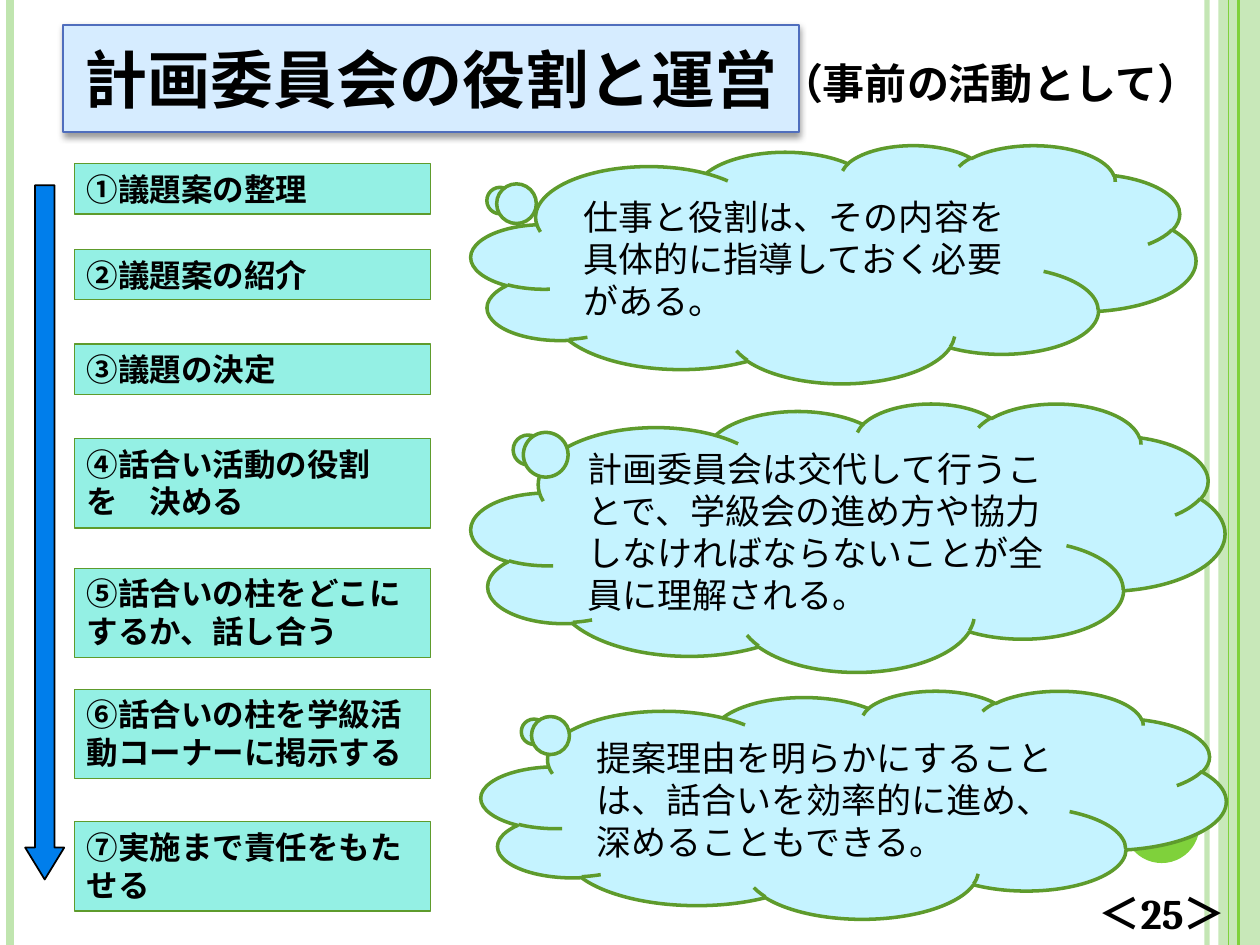
from lxml.etree import SubElement
from pptx import Presentation
from pptx.dml.color import RGBColor
from pptx.enum.shapes import MSO_CONNECTOR, MSO_SHAPE as Preset
from pptx.enum.text import MSO_ANCHOR as Anchor, MSO_AUTO_SIZE as AutoSize, PP_ALIGN as Align
from pptx.oxml.ns import qn
from pptx.util import Inches, Pt

BLACK = RGBColor(0x00, 0x00, 0x00)
PALE_GREEN = RGBColor(0xC0, 0xE5, 0xAF)
BRIGHT_GREEN = RGBColor(0x7F, 0xD1, 0x3B)
DARK_GREEN = RGBColor(0x5E, 0x9B, 0x2C)
TITLE_FILL = RGBColor(0xD6, 0xEC, 0xFF)
TITLE_LINE = RGBColor(0x50, 0x6E, 0xBD)
STEP_FILL = RGBColor(0x94, 0xF0, 0xE4)
CLOUD_FILL = RGBColor(0xC5, 0xF3, 0xFF)
ARROW_FILL = RGBColor(0x00, 0x7E, 0xEB)
GOTHIC = "Noto Sans CJK JP"
SERIF = "Cambria"

deck = Presentation()
deck.slide_width, deck.slide_height = Inches(10), Inches(7.5)
COL, ROW = deck.slide_width / 100, deck.slide_height / 75
slide = deck.slides.add_slide(deck.slide_layouts[5])
shapes = slide.shapes


def draw(preset, col, row, cols, rows, fill, line=None, weight=1):
    """Add a preset shape on the 100 x 75 grid."""
    shape = shapes.add_shape(preset, int(col * COL), int(row * ROW), int(cols * COL), int(rows * ROW))
    shape.shadow.inherit = False
    shape.fill.solid()
    shape.fill.fore_color.rgb = fill
    if line is None:
        shape.line.fill.background()
    else:
        shape.line.color.rgb = line
        shape.line.width = Pt(weight)
    return shape


def write(holder, text, size=18, font=GOTHIC, bold=True, align=Align.LEFT, anchor=Anchor.TOP):
    """Put one formatted paragraph into a shape."""
    frame = holder.text_frame
    frame.word_wrap = True
    frame.auto_size = AutoSize.NONE
    frame.vertical_anchor = anchor
    paragraph = frame.paragraphs[0]
    paragraph.alignment = align
    run = paragraph.add_run()
    run.text = text
    run.font.size, run.font.bold, run.font.name = Pt(size), bold, font
    run.font.color.rgb = BLACK
    SubElement(run.font._element, qn("a:ea"), typeface=GOTHIC)


# Striped borders: column, colour, weight, opacity in percent
right_band = draw(Preset.RECTANGLE, 96.7, 0, 3.3, 75, PALE_GREEN)
translucent = [(right_band, 87)]
for col, color, weight, opacity in [
    (95.8, PALE_GREEN, 3, 93),
    (0.8, PALE_GREEN, 4.5, 100),
    (98.3, BRIGHT_GREEN, 1.5, 100),
    (97.5, BRIGHT_GREEN, 0.75, 100),
]:
    stripe = shapes.add_connector(MSO_CONNECTOR.STRAIGHT, int(col * COL), 0, int(col * COL), deck.slide_height)
    stripe.line.color.rgb = color
    stripe.line.width = Pt(weight)
    SubElement(stripe._element.spPr, qn("a:effectLst"))
    if opacity < 100:
        translucent.append((stripe, opacity))
for part, opacity in translucent:
    color_node = next(part._element.spPr.iter(qn("a:srgbClr")))
    SubElement(color_node, qn("a:alpha"), val=str(opacity * 1000))
draw(Preset.OVAL, 89.2, 62.5, 6, 6, BRIGHT_GREEN)

# Title with a soft shadow below it
title = shapes.title
title.left, title.top = int(5 * COL), int(2 * ROW)
title.width, title.height = int(58.4 * COL), int(8.5 * ROW)
title.fill.solid()
title.fill.fore_color.rgb = TITLE_FILL
title.line.color.rgb = TITLE_LINE
title.line.width = Pt(1)
write(title, "計画委員会の役割と運営", size=36, align=Align.CENTER, anchor=Anchor.MIDDLE)
effects = SubElement(title._element.spPr, qn("a:effectLst"))
shadow = SubElement(effects, qn("a:outerShdw"), blurRad=str(Pt(4)), dist=str(Pt(2)),
                    dir="5400000", rotWithShape="0")
shadow_color = SubElement(shadow, qn("a:srgbClr"), val=str(BLACK))
SubElement(shadow_color, qn("a:alpha"), val="40000")

# Seven steps: top row, height in rows, text
ONE_LINE, TWO_LINES = 4, 7.1
for row, rows, step in [
    (13, ONE_LINE, "①議題案の整理"),
    (19.8, ONE_LINE, "②議題案の紹介"),
    (27.3, ONE_LINE, "③議題の決定"),
    (34.8, TWO_LINES, "④話合い活動の役割を　決める"),
    (45.1, TWO_LINES, "⑤話合いの柱をどこにするか、話し合う"),
    (54.7, TWO_LINES, "⑥話合いの柱を学級活動コーナーに掲示する"),
    (65.2, TWO_LINES, "⑦実施まで責任をもたせる"),
]:
    write(draw(Preset.RECTANGLE, 5.9, row, 28.3, rows, STEP_FILL, DARK_GREEN, 0.75), step, font=SERIF)

# Advice clouds: place on the grid, pointer offset, text
for place, pointer, advice in [
    ((37.4, 11.5, 57.5, 18.9), (-0.465, -0.269),
     "仕事と役割は、その内容を具体的に指導しておく必要がある。"),
    ((37.4, 32, 59.8, 21.3), (-0.429, -0.329),
     "計画委員会は交代して行うことで、学級会の進め方や協力しなければならないことが全員に理解される。"),
    ((38.2, 54.8, 59.1, 18.1), (-0.435, -0.323),
     "提案理由を明らかにすることは、話合いを効率的に進め、深めることもできる。"),
]:
    cloud = draw(Preset.CLOUD_CALLOUT, *place, CLOUD_FILL, DARK_GREEN, 2)
    cloud.adjustments[0], cloud.adjustments[1] = pointer
    write(cloud, advice, size=20, bold=False, anchor=Anchor.MIDDLE)

# Page number and subtitle
for place, text, font, anchor in [
    ((86.2, 69.8, 14.2, 5.2), "＜25＞", SERIF, Anchor.MIDDLE),
    ((61, 4.1, 38.2, 5), "（事前の活動として）", GOTHIC, Anchor.TOP),
]:
    col, row, cols, rows = place
    label = shapes.add_textbox(int(col * COL), int(row * ROW), int(cols * COL), int(rows * ROW))
    write(label, text, size=24, font=font, anchor=anchor)

# Arrow showing the order of the steps
flow = draw(Preset.DOWN_ARROW, 2, 14.7, 3.1, 55.1, ARROW_FILL, BLACK)
flow.adjustments[0], flow.adjustments[1] = 0.5, 0.816

deck.save("out.pptx")
